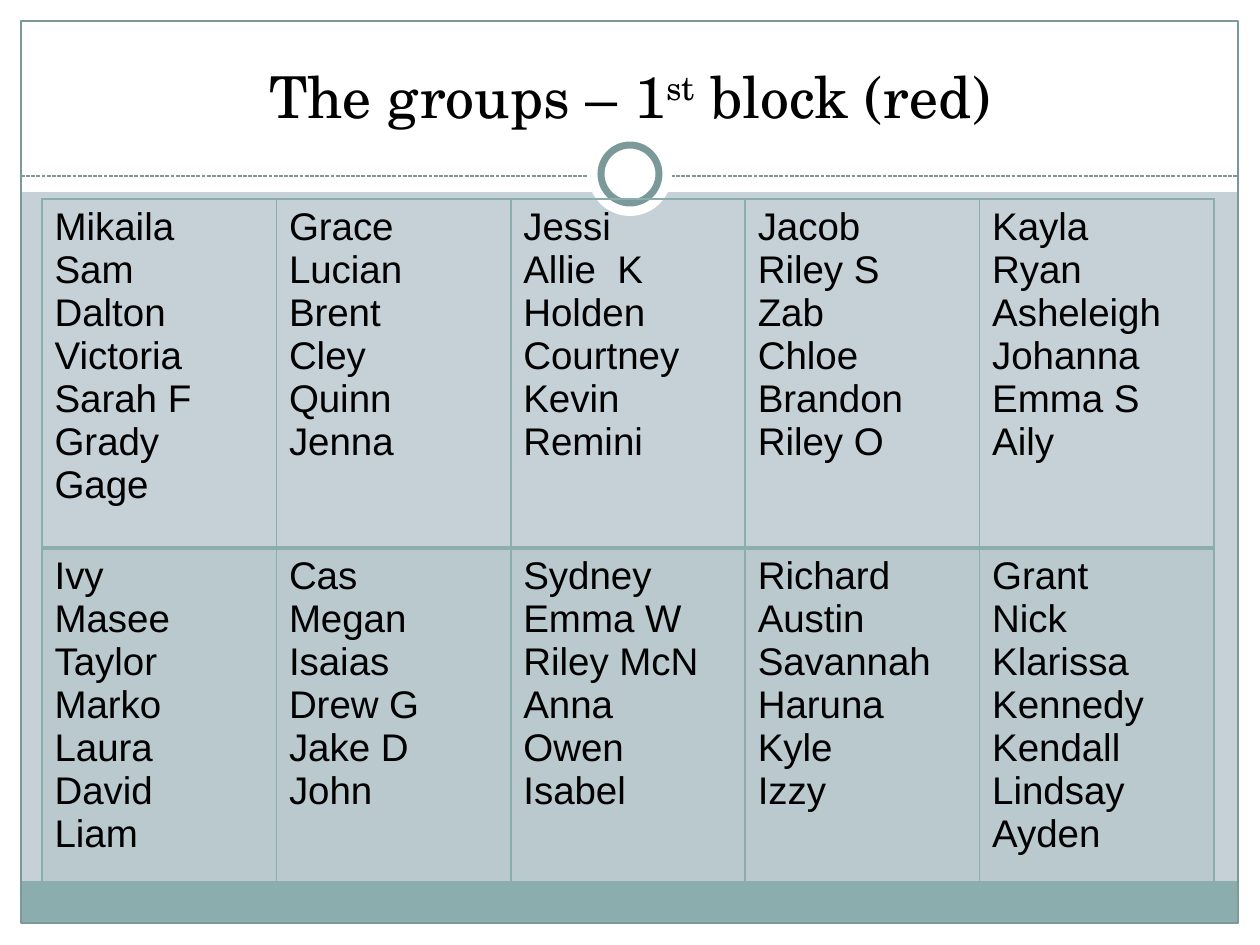
import pptx
import pptx.dml.color
import pptx.enum.dml
import pptx.enum.shapes
import pptx.enum.text
import pptx.oxml
import pptx.oxml.ns
import pptx.util

PX = 914400 / 126
WIDE, HIGH = 1260, 945
TEAL, SLATE, WHITE, BLACK = "8CADAE", "7C999A", "FFFFFF", "000000"
BACK = "C5D1D7"

TITLE = [("The groups – 1", 0), ("st", 30000), (" block (red)", 0)]
GROUPS = [
    [
        ["Mikaila", "Sam", "Dalton", "Victoria", "Sarah F", "Grady", "Gage"],
        ["Grace", "Lucian", "Brent", "Cley", "Quinn", "Jenna"],
        ["Jessi", "Allie  K", "Holden", "Courtney", "Kevin", "Remini"],
        ["Jacob", "Riley S", "Zab", "Chloe", "Brandon", "Riley O"],
        ["Kayla", "Ryan", "Asheleigh", "Johanna", "Emma S", "Aily"],
    ],
    [
        ["Ivy", "Masee", "Taylor", "Marko", "Laura", "David", "Liam"],
        ["Cas", "Megan", "Isaias", "Drew G", "Jake D", "John"],
        ["Sydney", "Emma W", "Riley McN", "Anna", "Owen", "Isabel"],
        ["Richard", "Austin", "Savannah", "Haruna", "Kyle", "Izzy"],
        ["Grant", "Nick", "Klarissa", "Kennedy", "Kendall", "Lindsay", "Ayden"],
    ],
]

# kind, left, top, width, height, fill, line, line width in points
FRAME = [
    ("RECTANGLE", 0, 924, WIDE, 21, WHITE, None, 0),
    ("RECTANGLE", 0, 0, WIDE, 192, WHITE, None, 0),
    ("RECTANGLE", 0, 0, 21, HIGH, WHITE, None, 0),
    ("RECTANGLE", 1239, 0, 21, HIGH, WHITE, None, 0),
    ("RECTANGLE", 21, 881, 1217, 43, TEAL, None, 0),
    ("RECTANGLE", 21, 21, 1217, 902, None, SLATE, 0.75),
]
RINGS = [
    ("OVAL", 588, 132, 84, 84, WHITE, None, 0),
    ("OVAL", 601, 145, 58, 58, WHITE, SLATE, 4),
]


def px(*sizes):
    return [pptx.util.Emu(round(size * PX)) for size in sizes]


def color(code):
    return pptx.dml.color.RGBColor.from_string(code)


def paint(fill, code):
    if code:
        fill.solid()
        fill.fore_color.rgb = color(code)
    else:
        fill.background()


def style(para, face, size):
    para.font.name = face
    para.font.size = pptx.util.Pt(size)
    para.font.color.rgb = color(BLACK)


def add_shapes(slide, parts):
    for kind, left, top, width, height, fill, line, weight in parts:
        preset = getattr(pptx.enum.shapes.MSO_SHAPE, kind)
        shape = slide.shapes.add_shape(preset, *px(left, top, width, height))
        shape.shadow.inherit = False
        paint(shape.fill, fill)
        paint(shape.line.fill, line)
        if line:
            shape.line.width = pptx.util.Pt(weight)


def add_rule(slide):
    straight = pptx.enum.shapes.MSO_CONNECTOR.STRAIGHT
    rule = slide.shapes.add_connector(straight, *px(21, 176, 1239, 176))
    rule.line.color.rgb = color(SLATE)
    rule.line.width = pptx.util.Pt(0.75)
    rule.line.dash_style = pptx.enum.dml.MSO_LINE.SQUARE_DOT
    props = rule._element.spPr
    props.append(props.makeelement(pptx.oxml.ns.qn("a:effectLst"), {}))


def add_title(slide):
    frame = slide.shapes.add_textbox(*px(42, 32, 1176, 104)).text_frame
    frame.word_wrap = True
    frame.vertical_anchor = pptx.enum.text.MSO_ANCHOR.BOTTOM
    para = frame.paragraphs[0]
    para.alignment = pptx.enum.text.PP_ALIGN.CENTER
    style(para, "TeX Gyre Schola", 33)
    for text, lift in TITLE:
        run = para.add_run()
        run.text = text
        if lift:
            run._r.get_or_add_rPr().set("baseline", str(lift))


def add_border(cell, top, bottom):
    """Draw the four sides; top and bottom are widths in points."""
    props = cell._tc.get_or_add_tcPr()
    sides = [("L", 1), ("R", 1), ("T", top), ("B", bottom)]
    for place, (side, weight) in enumerate(sides):
        props.insert(place, pptx.oxml.parse_xml(
            f'<a:ln{side} {pptx.oxml.ns.nsdecls("a")} w="{weight * 12700}">'
            f'<a:solidFill><a:srgbClr val="{TEAL}"/></a:solidFill></a:ln{side}>'))


def tint(cell, alpha):
    paint(cell.fill, TEAL)
    tone = cell._tc.tcPr.find(".//" + pptx.oxml.ns.qn("a:srgbClr"))
    tone.append(tone.makeelement(pptx.oxml.ns.qn("a:alpha"), {"val": str(alpha * 1000)}))


def add_groups(slide):
    rows, cols = len(GROUPS), len(GROUPS[0])
    place = px(42, 199, 1172, 698)
    table = slide.shapes.add_table(rows, cols, *place).table
    table.first_row = table.horz_banding = False
    for r, row in enumerate(GROUPS):
        for c, names in enumerate(row):
            cell = table.cell(r, c)
            cell.text = "\n".join(names)
            for para in cell.text_frame.paragraphs:
                style(para, "Arial", 22)
            if r:
                tint(cell, 20)
            else:
                paint(cell.fill, None)
            add_border(cell, 2 if r else 1, 1 if r else 2)


def main():
    deck = pptx.Presentation()
    deck.slide_width, deck.slide_height = px(WIDE, HIGH)
    slide = deck.slides.add_slide(deck.slide_layouts[6])
    paint(slide.background.fill, BACK)
    add_shapes(slide, FRAME)
    add_rule(slide)
    add_shapes(slide, RINGS)
    add_title(slide)
    add_groups(slide)
    deck.save("out.pptx")


if __name__ == "__main__":
    main()
